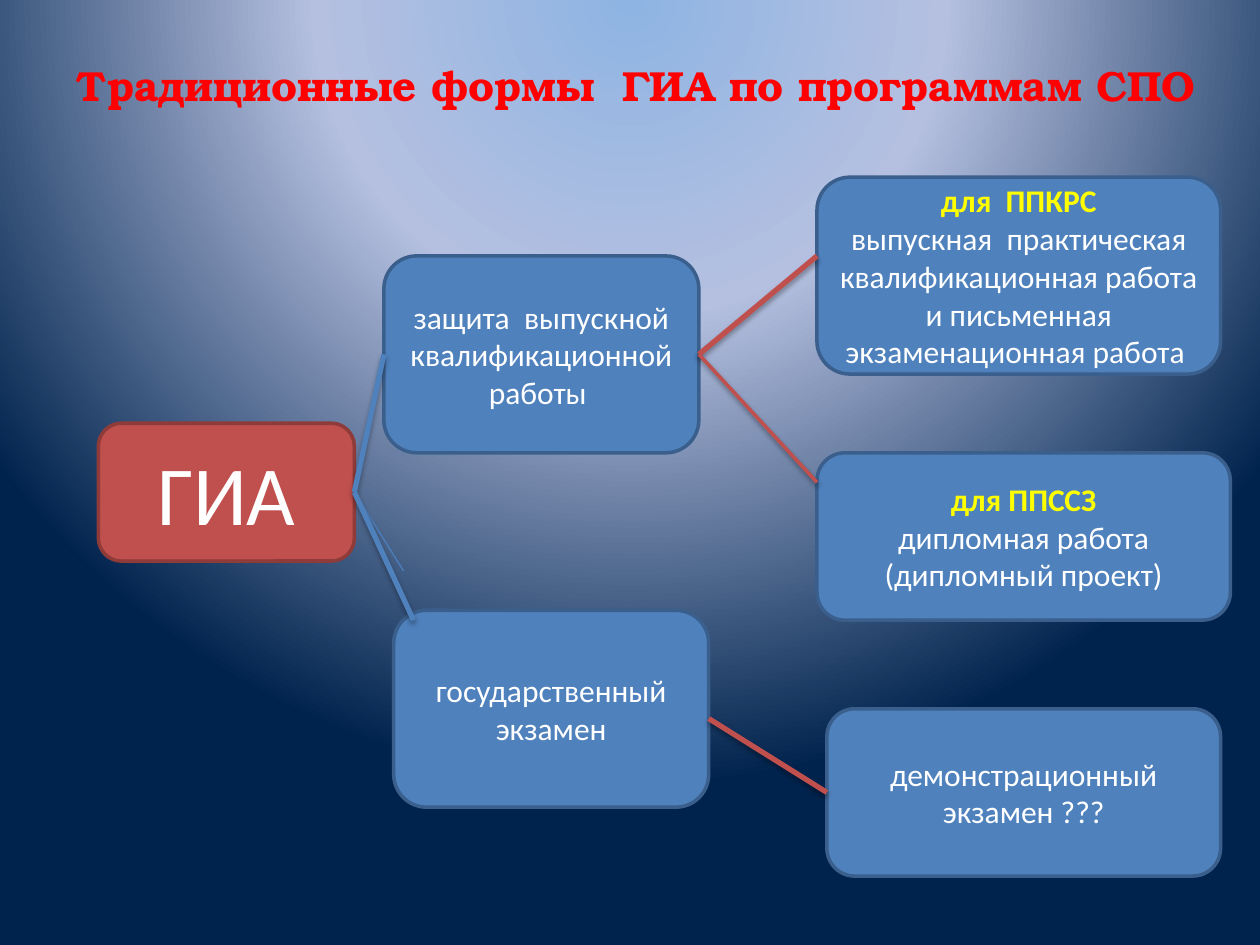
from lxml.etree import SubElement
from pptx import Presentation
from pptx.dml.color import RGBColor
from pptx.enum.shapes import MSO_CONNECTOR, MSO_SHAPE
from pptx.enum.text import MSO_ANCHOR, PP_ALIGN
from pptx.oxml import parse_xml
from pptx.oxml.ns import nsdecls, qn
from pptx.util import Inches, Pt

# The slide is a grid of 128 columns by 96 rows of square cells
WIDTH, HEIGHT, COLUMNS = 10, 7.5, 128
RED, BLUE, WHITE, YELLOW = "C0504D", "4F81BD", "FFFFFF", "FFFF00"
RED_EDGE, BLUE_EDGE = "8E3B39", "3A5F8C"
BODY = dict(name="Calibri", size=Pt(18), bold=False)
LEAD = {**BODY, "bold": True}
ROOT = {**BODY, "size": Pt(48)}
TITLE = dict(name="TeX Gyre Bonum", size=Pt(24), bold=True)


def cells(count):
    return Inches(count * WIDTH / COLUMNS)


def color(value):
    return RGBColor.from_string(value)


def write(frame, lines):
    """Write one centred paragraph for each (text, format, colour)."""
    frame.word_wrap = True
    frame.vertical_anchor = MSO_ANCHOR.MIDDLE
    for index, (text, style, ink) in enumerate(lines):
        para = frame.add_paragraph() if index else frame.paragraphs[0]
        para.alignment = PP_ALIGN.CENTER
        span = para.add_run()
        span.text = text
        for key, value in style.items():
            setattr(span.font, key, value)
        span.font.color.rgb = color(ink)


def paint_background(page, stops):
    page.background.fill.solid()
    marks = "".join(f'<a:gs pos="{share * 1000}"><a:srgbClr val="{ink}"/></a:gs>'
                    for share, ink in stops)
    gradient = parse_xml(
        f'<a:gradFill {nsdecls("a")} rotWithShape="1"><a:gsLst>{marks}</a:gsLst>'
        '<a:path path="circle"><a:fillToRect l="50000" t="-80000" r="50000" b="180000"/>'
        '</a:path></a:gradFill>')
    solid = page.background.fill._xPr.find(qn("a:solidFill"))
    solid.getparent().replace(solid, gradient)


def draw_title(page, box, text):
    title = page.shapes.title
    for key, value in zip(("left", "top", "width", "height"), box):
        setattr(title, key, cells(value))
    write(title.text_frame, [(text, TITLE, "FF0000")])


def draw_node(page, box, lines, fill=BLUE, edge=BLUE_EDGE):
    node = page.shapes.add_shape(MSO_SHAPE.ROUNDED_RECTANGLE, *map(cells, box))
    node.shadow.inherit = False
    node.fill.solid()
    node.fill.fore_color.rgb = color(fill)
    node.line.color.rgb = color(edge)
    node.line.width = Pt(2)
    write(node.text_frame, lines)


def draw_link(page, start, end, ink, weight, shadow):
    link = page.shapes.add_connector(MSO_CONNECTOR.STRAIGHT, *map(cells, start + end))
    link.line.color.rgb = color(ink)
    link.line.width = Pt(weight)
    effects = SubElement(link._element.spPr, qn("a:effectLst"))
    if shadow:
        alpha, distance = shadow
        outer = SubElement(effects, qn("a:outerShdw"), blurRad=str(Pt(3.1)),
                           dist=str(Pt(distance)), dir="5400000", rotWithShape="0")
        black = SubElement(outer, qn("a:srgbClr"), val="000000")
        SubElement(black, qn("a:alpha"), val=str(alpha * 1000))


def draw_region(page, origin, nodes, links):
    """Place nodes, then links, relative to the region's top left cell."""
    x, y = origin
    for (left, top, width, height), *look in nodes:
        draw_node(page, (x + left, y + top, width, height), *look)
    for start, end, *look in links:
        draw_link(page, (x + start[0], y + start[1]), (x + end[0], y + end[1]), *look)


def main():
    deck = Presentation()
    deck.slide_width, deck.slide_height = Inches(WIDTH), Inches(HEIGHT)
    page = deck.slides.add_slide(deck.slide_layouts[5])
    paint_background(page, [(0, "8EB4E3"), (40, "B5C0E0"), (100, "00234D")])
    draw_title(page, (6, 2, 118.7, 13.2), "Традиционные формы  ГИА по программам СПО ")

    # Root and the two kinds of attestation
    deep, light = (35, 1.8), (38, 1.6)
    hub = (26, 24)
    draw_region(page, (10, 26), [
        ((0, 17, 26, 14), [("ГИА", ROOT, WHITE)], RED, RED_EDGE),
        ((29, 0, 32, 20), [("защита  выпускной квалификационной работы ", BODY, WHITE)]),
        ((30, 36, 32, 20), [("государственный экзамен", BODY, WHITE)]),
    ], [
        (hub, (29, 10), BLUE, 3, deep),
        (hub, (31, 32), "4B7EBC", 0.75, None),
        (hub, (32, 37), BLUE, 3, deep),
    ])

    # Forms of each kind
    draw_region(page, (71, 18), [
        ((12, 0, 41, 20), [
            ("для  ППКРС", LEAD, YELLOW),
            ("выпускная  практическая квалификационная работа и письменная "
             "экзаменационная работа ", BODY, WHITE)]),
        ((12, 28, 42, 17), [
            ("для ППССЗ", LEAD, YELLOW),
            ("дипломная работа (дипломный проект)", BODY, WHITE)]),
        ((13, 54, 40, 17), [("демонстрационный экзамен ???", BODY, WHITE)]),
    ], [
        ((0, 18), (12, 8), RED, 3, deep),
        ((0, 18), (12, 31), RED, 2, light),
        ((1, 55), (13, 62.5), RED, 3, deep),
    ])
    deck.save("out.pptx")


if __name__ == "__main__":
    main()
